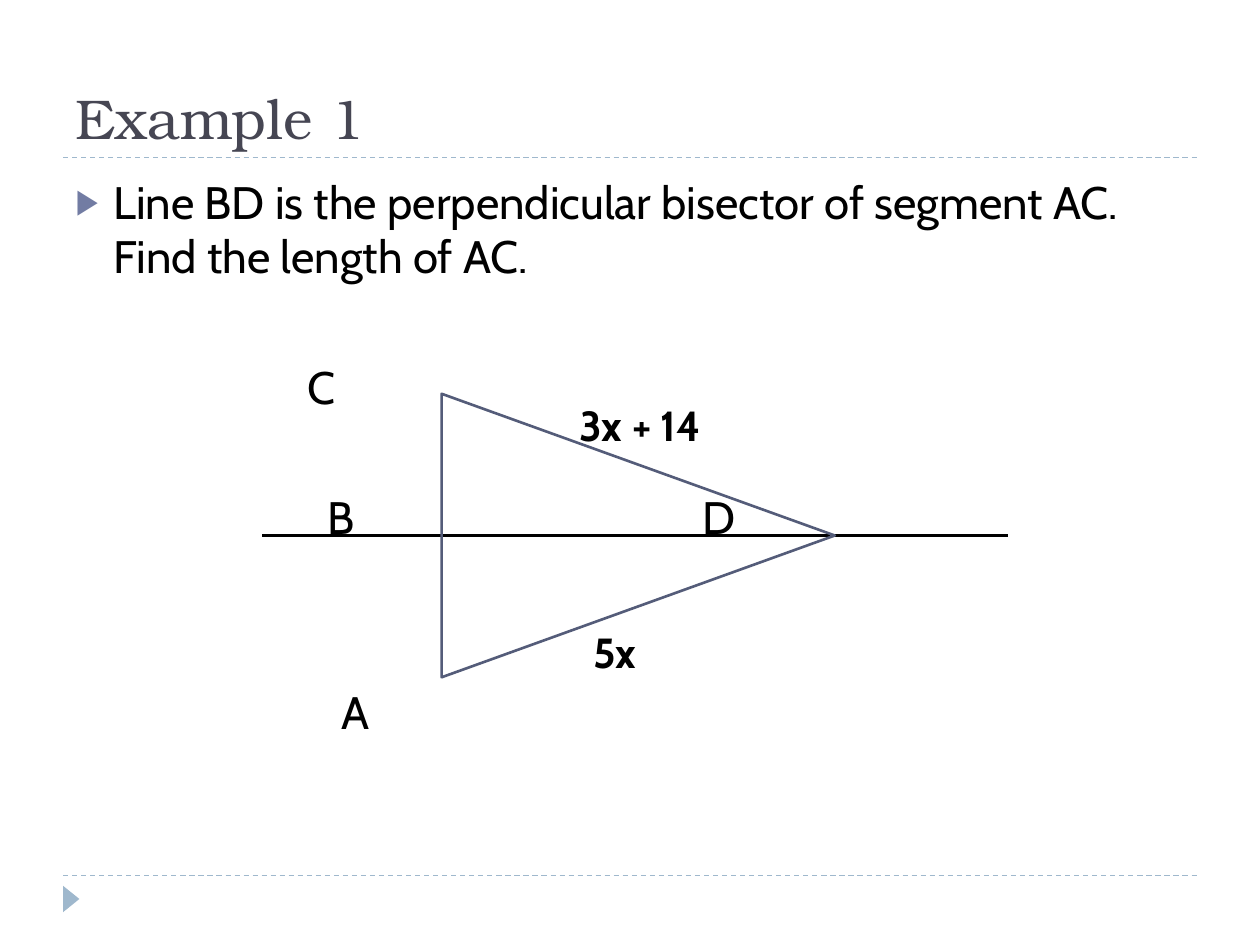
"""Build a geometry slide about a perpendicular bisector."""
from dataclasses import dataclass

from lxml import etree
from pptx import Presentation
from pptx import util as u
from pptx.dml.color import RGBColor
from pptx.enum import dml, shapes, text
from pptx.oxml import ns


@dataclass(frozen=True)
class Theme:
    """Fonts, type sizes and colours of the slide."""
    heading_font: str = "TeX Gyre Bonum"
    body_font: str = "Cabin"
    title_size: int = 32
    body_size: int = 26
    measure_size: int = 24
    title: str = "464653"
    ink: str = "000000"
    rule: str = "9FB8CD"
    bullet: str = "727CA3"
    outline: str = "545C79"


THEME = Theme()


def style_font(paragraph, face, size, color, bold=False):
    """Set the font of a whole paragraph."""
    font = paragraph.font
    font.name, font.size, font.bold = face, u.Pt(size), bold
    font.color.rgb = RGBColor.from_string(color)


def place(placeholder, left, top, width, height):
    """Move a placeholder and keep its text at full size."""
    placeholder.left, placeholder.top = u.Inches(left), u.Inches(top)
    placeholder.width, placeholder.height = u.Inches(width), u.Inches(height)
    placeholder.text_frame.auto_size = text.MSO_AUTO_SIZE.NONE


def add_bullet(paragraph, indent):
    """Give a paragraph a coloured triangle bullet and a hanging indent."""
    properties = paragraph._p.get_or_add_pPr()
    properties.set("marL", str(u.Inches(indent)))
    properties.set("indent", str(u.Inches(-indent)))
    color = etree.SubElement(properties, ns.qn("a:buClr"))
    etree.SubElement(color, ns.qn("a:srgbClr"), val=THEME.bullet)
    etree.SubElement(properties, ns.qn("a:buSzPct"), val="76000")
    etree.SubElement(properties, ns.qn("a:buChar"), char="▶")


def fill_title(slide, wording):
    """Write the slide title."""
    title = slide.shapes.title
    place(title, 0.5, 0.17, 9, 1.08)
    title.text_frame.text = wording
    title.text_frame.vertical_anchor = text.MSO_ANCHOR.BOTTOM
    heading = title.text_frame.paragraphs[0]
    heading.alignment = text.PP_ALIGN.LEFT
    style_font(heading, THEME.heading_font, THEME.title_size, THEME.title)


def fill_body(slide, wording):
    """Write the bulleted problem statement."""
    body = slide.placeholders[1]
    place(body, 0.5, 1.33, 9, 5.4)
    body.text_frame.text = wording
    problem = body.text_frame.paragraphs[0]
    problem.space_before = u.Pt(6)
    add_bullet(problem, 0.3)
    style_font(problem, THEME.body_font, THEME.body_size, THEME.ink)


def add_horizontal(slide, left, right, y, color, weight, dash=None):
    """Draw a horizontal line without a shadow."""
    line = slide.shapes.add_connector(
        shapes.MSO_CONNECTOR.STRAIGHT,
        u.Inches(left), u.Inches(y), u.Inches(right), u.Inches(y))
    line.line.color.rgb = RGBColor.from_string(color)
    line.line.width = u.Pt(weight)
    line.line.dash_style = dash
    etree.SubElement(line._element.spPr, ns.qn("a:effectLst"))


def add_triangle(slide, left, top, width, height, fill=None, outline=None):
    """Draw a triangle turned to point right."""
    triangle = slide.shapes.add_shape(
        shapes.MSO_SHAPE.ISOSCELES_TRIANGLE,
        u.Inches(left), u.Inches(top), u.Inches(width), u.Inches(height))
    triangle.rotation = 90
    triangle.shadow.inherit = False
    if fill:
        triangle.fill.solid()
        triangle.fill.fore_color.rgb = RGBColor.from_string(fill)
    else:
        triangle.fill.background()
    if outline:
        triangle.line.color.rgb = RGBColor.from_string(outline)
        triangle.line.width = u.Pt(1.5)
    else:
        triangle.line.fill.background()


def add_label(slide, wording, left, top, width, size, bold=False):
    """Add a one-line label to the diagram."""
    label = slide.shapes.add_textbox(
        u.Inches(left), u.Inches(top), u.Inches(width), u.Inches(0.5))
    label.text_frame.word_wrap = True
    label.text_frame.text = wording
    style_font(label.text_frame.paragraphs[0], THEME.body_font, size, THEME.ink, bold)


def main():
    """Build and save the slide."""
    deck = Presentation()
    deck.slide_width, deck.slide_height = u.Inches(10), u.Inches(7.5)
    slide = deck.slides.add_slide(deck.slide_layouts[1])
    for placeholder in list(slide.placeholders)[2:]:
        placeholder._element.getparent().remove(placeholder._element)

    for rule_y in (1.25, 6.95):
        add_horizontal(slide, 0.5, 9.5, rule_y, THEME.rule, 0.75, dml.MSO_LINE.DASH)
    add_triangle(slide, 0.46, 7.07, 0.21, 0.13, fill=THEME.rule)

    fill_title(slide, "Example 1")
    fill_body(slide, "Line BD is the perpendicular bisector of segment AC. "
                     "Find the length of AC.")

    add_horizontal(slide, 2.08, 8, 4.25, THEME.ink, 1.5)
    add_triangle(slide, 3.94, 2.69, 2.25, 3.12, outline=THEME.outline)

    for point, left, top in (("C", 2.34, 2.8), ("B", 2.5, 3.83),
                             ("D", 5.48, 3.83), ("A", 2.61, 5.38)):
        add_label(slide, point, left, top, 0.5, THEME.body_size)
    for measure, left, top in (("3x + 14", 4.5, 3.12), ("5x", 4.61, 4.92)):
        add_label(slide, measure, left, top, 2.2, THEME.measure_size, bold=True)

    deck.save("out.pptx")


if __name__ == "__main__":
    main()
